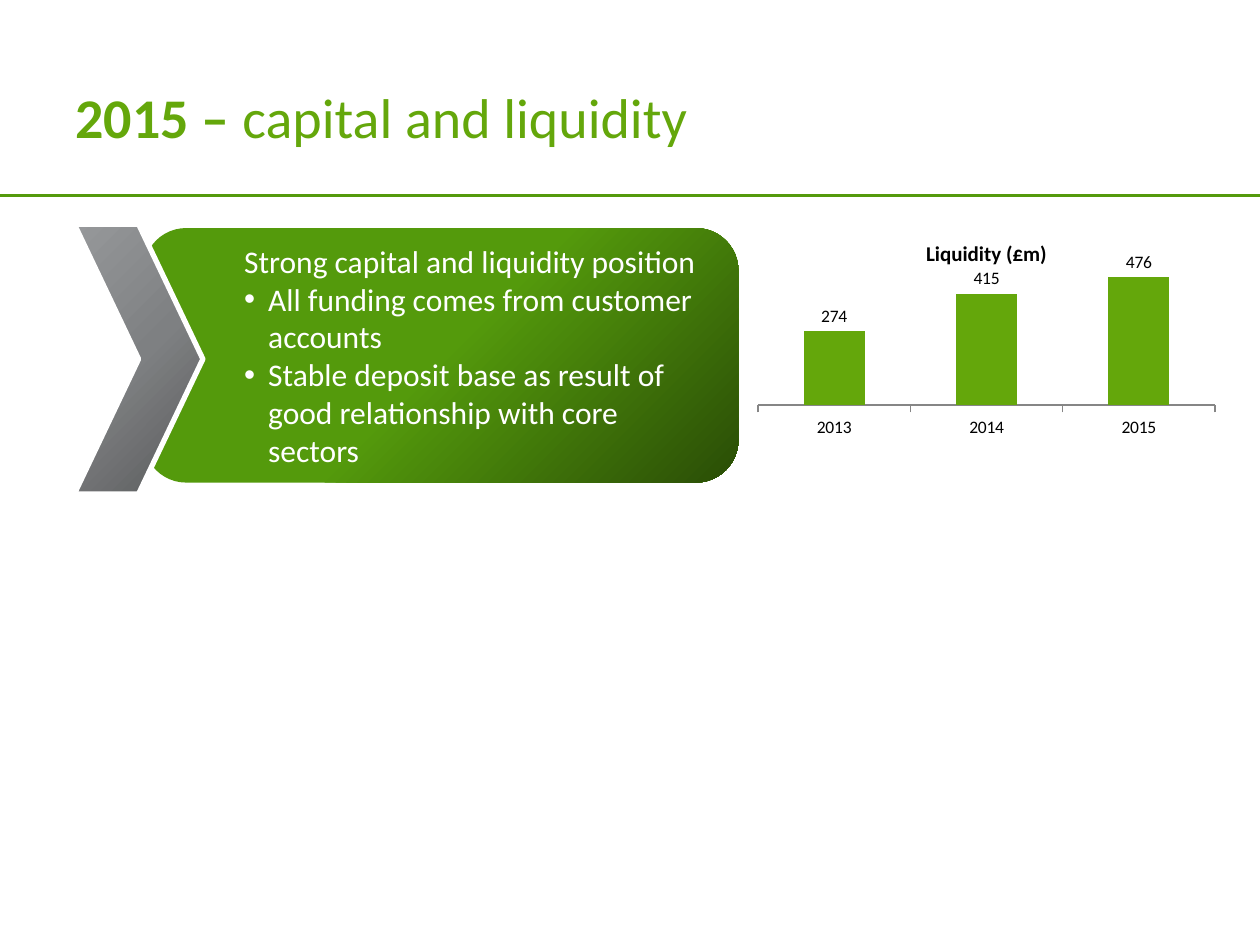
import pptx
import pptx.util
import pptx.oxml
import pptx.chart.data
from lxml import etree
from pptx.dml.color import RGBColor
from pptx.enum.chart import XL_CHART_TYPE, XL_LABEL_POSITION, XL_TICK_MARK
from pptx.enum.shapes import MSO_CONNECTOR, MSO_SHAPE
from pptx.enum.text import MSO_ANCHOR, PP_ALIGN
from pptx.oxml.ns import nsdecls, qn
from pptx.util import Inches, Pt

# Content
TITLE = [("2015 – ", True), ("capital and liquidity", False)]
POINTS = [  # text, bulleted
    ("Strong capital and liquidity position", False),
    ("All funding comes from customer accounts", True),
    ("Stable deposit base as result of good relationship with core sectors", True),
]
CHART_TITLE = "Liquidity (£m)"
YEARS = ["2013", "2014", "2015"]
LIQUIDITY = [274, 415, 476]

FONT = "Calibri"
GREEN = RGBColor(0x64, 0xA7, 0x0B)
RULE_GREEN = RGBColor(0x54, 0x9A, 0x0C)
DARK_GREEN = RGBColor(0x2A, 0x4D, 0x06)
GREYS = [RGBColor(0x59, 0x5A, 0x5B), RGBColor(0x7E, 0x80, 0x82), RGBColor(0x96, 0x98, 0x9A)]
AXIS_GREY = RGBColor(0x86, 0x86, 0x86)
WHITE = RGBColor(0xFF, 0xFF, 0xFF)
BLACK = RGBColor(0, 0, 0)

LINEAR = '<a:lin ang="2700000" scaled="0"/>'
FROM_CORNER = '<a:path path="circle"><a:fillToRect l="100000" t="100000"/></a:path>'


def set_font(font, size, color, bold=False):
    font.name, font.size, font.bold = FONT, Pt(size), bold
    font.color.rgb = color


def set_gradient(sp, stops, direction):
    gs = "".join(f'<a:gs pos="{pos * 1000}"><a:srgbClr val="{color}"/></a:gs>'
                 for pos, color in stops)
    sp.fill.gradient()
    old = sp._element.spPr.find(qn("a:gradFill"))
    new = pptx.oxml.parse_xml(f'<a:gradFill {nsdecls("a")} rotWithShape="1">'
                              f'<a:gsLst>{gs}</a:gsLst>{direction}</a:gradFill>')
    old.getparent().replace(old, new)


def set_indent(p, bulleted):
    pPr = p._p.get_or_add_pPr()
    pPr.set("marL", str(Inches(0.58)))
    pPr.set("indent", str(Inches(-0.19)))
    if bulleted:
        color = etree.SubElement(pPr, qn("a:buClr"))
        etree.SubElement(color, qn("a:srgbClr")).set("val", str(WHITE))
        etree.SubElement(pPr, qn("a:buFont")).set("typeface", "Arial")
        etree.SubElement(pPr, qn("a:buChar")).set("char", "•")
    else:
        etree.SubElement(pPr, qn("a:buNone"))


prs = pptx.Presentation()
prs.slide_width, prs.slide_height = Inches(10), Inches(7.5)
s = prs.slides.add_slide(prs.slide_layouts[6])

# Rule under the title
rule = s.shapes.add_connector(MSO_CONNECTOR.STRAIGHT, Inches(-0.03), Inches(1.55),
                              Inches(10.05), Inches(1.55))
rule.line.color.rgb = RULE_GREEN
rule.line.width = Pt(1.5)
etree.SubElement(rule._element.spPr, qn("a:effectLst"))

# Title
title = s.shapes.add_textbox(Inches(0.5), Inches(0.3), Inches(9), Inches(1.25))
tf = title.text_frame
tf.word_wrap = True
tf.vertical_anchor = MSO_ANCHOR.MIDDLE
for text, bold in TITLE:
    r = tf.paragraphs[0].add_run()
    r.text = text
    set_font(r.font, 32, GREEN, bold)

# Panel with the key points
panel = s.shapes.add_shape(MSO_SHAPE.ROUNDED_RECTANGLE, Inches(1.14), Inches(1.81),
                           Inches(4.72), Inches(2.02))
panel.shadow.inherit = False
panel.line.fill.background()
set_gradient(panel, [(50, RULE_GREEN), (100, DARK_GREEN)], LINEAR)
tf = panel.text_frame
tf.word_wrap = True
tf.vertical_anchor = MSO_ANCHOR.MIDDLE
tf.margin_left, tf.margin_right = Inches(0.31), Inches(0.1)
tf.margin_top = tf.margin_bottom = Inches(0.05)
tf.text = "\n".join(text for text, _ in POINTS)
for p, (_, bulleted) in zip(tf.paragraphs, POINTS):
    p.alignment = PP_ALIGN.LEFT
    set_indent(p, bulleted)
    set_font(p.runs[0].font, 18, WHITE)

# Chevron over the panel's left edge
chevron = s.shapes.add_shape(MSO_SHAPE.CHEVRON, Inches(0.59), Inches(1.78),
                             Inches(1.02), Inches(2.14))
chevron.shadow.inherit = False
set_gradient(chevron, zip((0, 50, 100), GREYS), FROM_CORNER)
chevron.line.color.rgb = WHITE
chevron.line.width = Pt(3)

# Liquidity chart
data = pptx.chart.data.CategoryChartData()
data.categories = YEARS
data.add_series("Series 1", LIQUIDITY)
chart = s.shapes.add_chart(XL_CHART_TYPE.COLUMN_CLUSTERED, Inches(5.94), Inches(1.78),
                           Inches(3.78), Inches(1.73), data).chart
set_font(chart.font, 10, BLACK)
chart.has_legend = False
chart.has_title = True
tf = chart.chart_title.text_frame
tf.text = CHART_TITLE
set_font(tf.paragraphs[0].runs[0].font, 12, BLACK, True)
chart.chart_title.include_in_layout = True  # the title lies over the plot

value_axis = chart.value_axis
value_axis.minimum_scale, value_axis.maximum_scale = 0, 600
value_axis.has_major_gridlines = False
value_axis.visible = False
category_axis = chart.category_axis
category_axis.major_tick_mark = XL_TICK_MARK.OUTSIDE
category_axis.format.line.color.rgb = AXIS_GREY

plot = chart.plots[0]
plot.gap_width = 150
plot.vary_by_categories = False
plot.has_data_labels = True
labels = plot.data_labels
labels.show_value = True
labels.position = XL_LABEL_POSITION.OUTSIDE_END
set_font(labels.font, 10, BLACK)
fill = plot.series[0].format.fill
fill.solid()
fill.fore_color.rgb = GREEN

# Plot area as fractions of the chart
plot_area = chart._chartSpace.chart.plotArea
for old in plot_area.findall(qn("c:layout")):
    plot_area.remove(old)
sizes = "".join(f'<c:{name} val="{value}"/>' for name, value in
                [("x", 0.02), ("y", 0.09), ("w", 0.96), ("h", 0.74)])
plot_area.insert(0, pptx.oxml.parse_xml(
    f'<c:layout {nsdecls("c")}><c:manualLayout><c:layoutTarget val="inner"/>'
    f'<c:xMode val="edge"/><c:yMode val="edge"/>{sizes}</c:manualLayout></c:layout>'))

prs.save("out.pptx")
